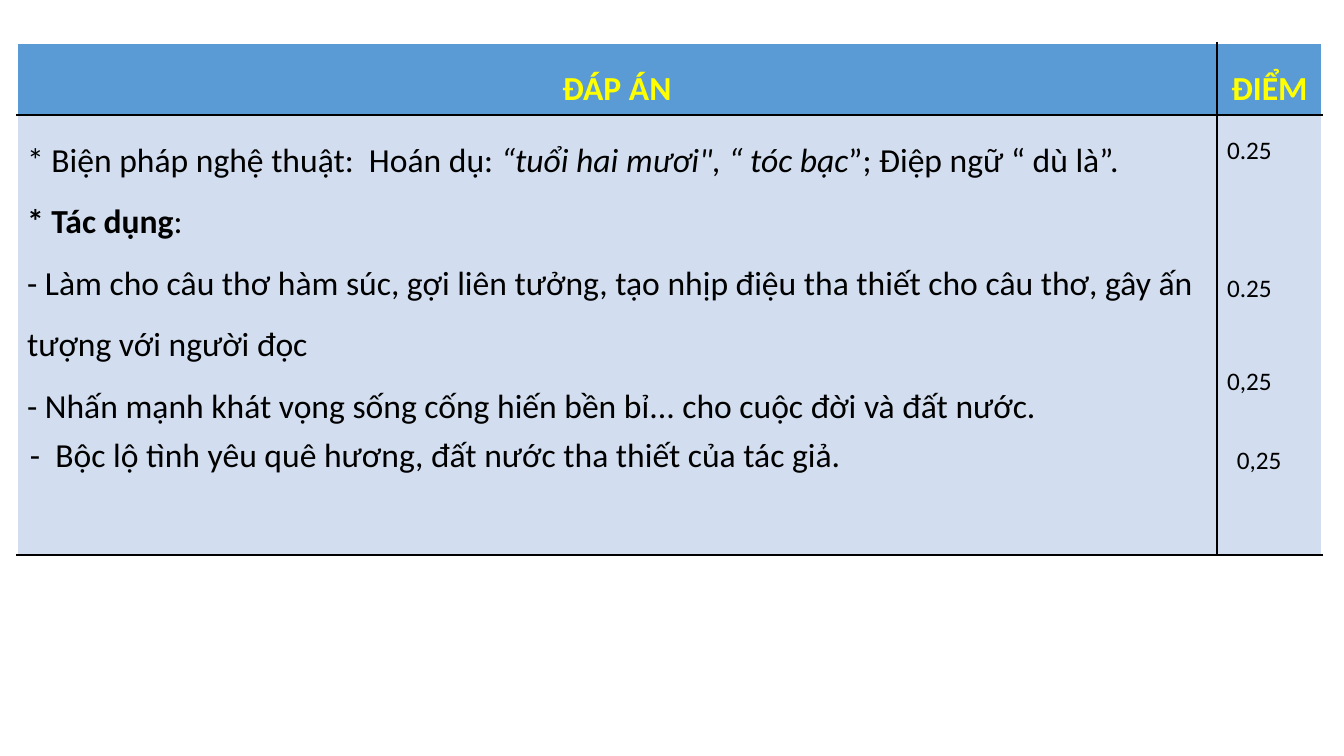
"""Build the answer-key slide: a marking table with one extra answer line and its score."""
from dataclasses import dataclass

from lxml import etree
from pptx import Presentation
from pptx import util as u
from pptx.dml.color import RGBColor
from pptx.enum import text
from pptx.oxml import ns

PX = 914400 / 100.8
FONT = "Calibri"
BLACK = RGBColor(0x00, 0x00, 0x00)
WHITE = RGBColor(0xFF, 0xFF, 0xFF)
YELLOW = RGBColor(0xFF, 0xFF, 0x00)
HEADER_BLUE = RGBColor(0x5B, 0x9B, 0xD5)
BODY_BLUE = RGBColor(0xD2, 0xDE, 0xEF)

TABLE_LEFT, TABLE_TOP = 17, 43
COLUMN_WIDTHS = (1200, 105)
ROW_HEIGHTS = (72, 440)
SCORE_LINE = 33


@dataclass(frozen=True)
class Span:
    """A piece of text with one weight and slant."""
    words: str
    bold: bool = False
    italic: bool = False


@dataclass(frozen=True)
class Line:
    """A paragraph and the space above it in points."""
    spans: tuple[Span, ...]
    before: int = 0


@dataclass(frozen=True)
class Note:
    """A loose text box with its frame in px."""
    left: int
    top: int
    width: int
    height: int
    words: str
    size: int


def plain(words: str, before: int = 0) -> Line:
    """Return a line made of one regular span."""
    return Line((Span(words),), before)


HEADINGS = ("ĐÁP ÁN", "ĐIỂM")
ANSWERS = (
    Line((Span("* Biện pháp nghệ thuật:  Hoán dụ: "),
          Span("“tuổi hai mươi\", “ tóc bạc", italic=True),
          Span("”; Điệp ngữ “ dù là”."))),
    Line((Span("* Tác dụng", bold=True), Span(":"))),
    plain("- Làm cho câu thơ hàm súc, gợi liên tưởng, tạo nhịp điệu tha thiết "
          "cho câu thơ, gây ấn tượng với người đọc"),
    plain("- Nhấn mạnh khát vọng sống cống hiến bền bỉ... cho cuộc đời và đất nước."),
)
SCORES = (plain("0.25"), plain("0.25", 2 * SCORE_LINE), plain("0,25", SCORE_LINE))
NOTES = (
    Note(20, 429, 838, 50, "-  Bộc lộ tình yêu quê hương, đất nước tha thiết của tác giả.", 24),
    Note(1227, 439, 66, 40, "0,25", 18),
)


def px(length: int) -> int:
    """Turn px into EMU."""
    return round(length * PX)


def write(frame, lines: tuple[Line, ...], *, size: int, color: RGBColor = BLACK,
          align=text.PP_ALIGN.LEFT, spacing: float = 1.0) -> None:
    """Fill a text frame with formatted lines."""
    for index, line in enumerate(lines):
        para = frame.add_paragraph() if index else frame.paragraphs[0]
        para.alignment = align
        para.line_spacing = spacing
        para.space_before = u.Pt(line.before)
        for span in line.spans:
            run = para.add_run()
            run.text = span.words
            run.font.name = FONT
            run.font.size = u.Pt(size)
            run.font.bold = span.bold
            run.font.italic = span.italic
            run.font.color.rgb = color


def set_borders(cell, **colors: RGBColor) -> None:
    """Draw one-point cell borders on the sides L, R, T and B."""
    properties = cell._tc.get_or_add_tcPr()
    for index, side in enumerate("LRTB"):
        border = etree.Element(ns.qn(f"a:ln{side}"), w=str(u.Pt(1)))
        fill = etree.SubElement(border, ns.qn("a:solidFill"))
        etree.SubElement(fill, ns.qn("a:srgbClr"), val=str(colors[side]))
        properties.insert(index, border)


def add_marking_table(page) -> None:
    """Add the table of answers and scores."""
    table = page.shapes.add_table(
        len(ROW_HEIGHTS), len(COLUMN_WIDTHS), px(TABLE_LEFT), px(TABLE_TOP),
        px(sum(COLUMN_WIDTHS)), px(sum(ROW_HEIGHTS))).table
    table.first_row = table.horz_banding = False
    for column, width in zip(table.columns, COLUMN_WIDTHS):
        column.width = px(width)
    for row, height in zip(table.rows, ROW_HEIGHTS):
        row.height = px(height)

    for index, heading in enumerate(HEADINGS):
        write(table.cell(0, index).text_frame, (Line((Span(heading, bold=True),)),),
              size=24, color=YELLOW, align=text.PP_ALIGN.CENTER, spacing=1.5)
    write(table.cell(1, 0).text_frame, ANSWERS, size=24, spacing=1.5)
    write(table.cell(1, 1).text_frame, SCORES, size=18, spacing=1.5)

    for row, fill in enumerate((HEADER_BLUE, BODY_BLUE)):
        for column in range(len(COLUMN_WIDTHS)):
            cell = table.cell(row, column)
            cell.fill.solid()
            cell.fill.fore_color.rgb = fill
            set_borders(cell, L=BLACK if column else WHITE, R=WHITE if column else BLACK,
                        T=BLACK if row else WHITE, B=BLACK)


def add_note(page, note: Note) -> None:
    """Add a text box that grows with its text."""
    box = page.shapes.add_textbox(px(note.left), px(note.top), px(note.width), px(note.height))
    box.text_frame.word_wrap = False
    box.text_frame.auto_size = text.MSO_AUTO_SIZE.SHAPE_TO_FIT_TEXT
    write(box.text_frame, (plain(note.words),), size=note.size)


def main() -> None:
    """Build and save the deck."""
    deck = Presentation()
    deck.slide_width, deck.slide_height = px(1344), px(756)
    page = deck.slides.add_slide(deck.slide_layouts[6])
    add_marking_table(page)
    for note in NOTES:
        add_note(page, note)
    deck.save("out.pptx")


if __name__ == "__main__":
    main()
